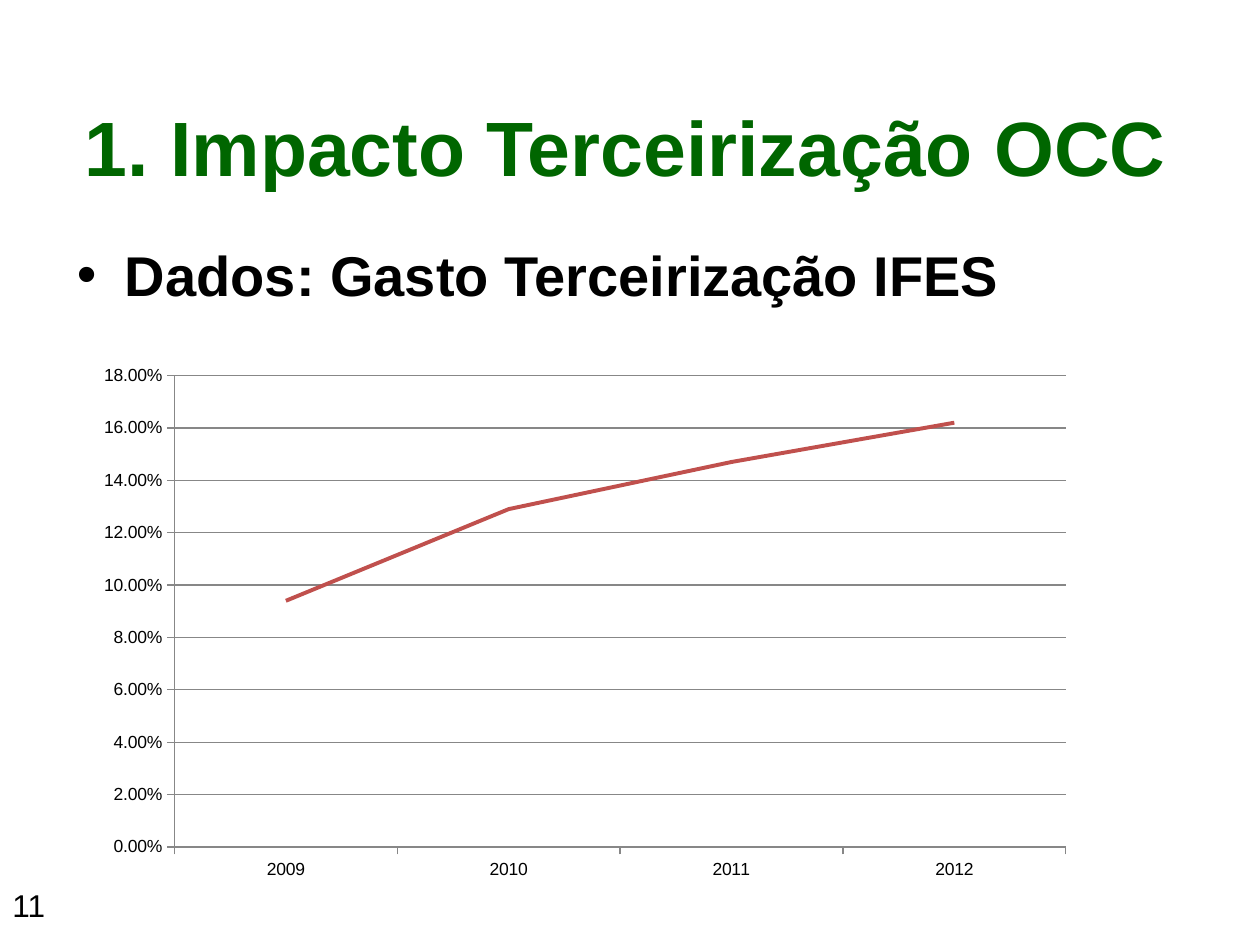
"""Build the slide on the share of outsourcing spending."""
from dataclasses import dataclass, field

from lxml import etree
from pptx import Presentation, util as u
from pptx.chart import data
from pptx.dml.color import RGBColor
from pptx.enum import chart as ch, text as tx
from pptx.oxml import ns


@dataclass(frozen=True)
class Theme:
    face: str = "Arial"
    ink: str = "000000"
    green: str = "006600"
    red: str = "C0504D"
    grid: str = "878787"
    head: int = 44
    body: int = 32
    num: int = 18
    tick: int = 10


@dataclass(frozen=True)
class Label:
    words: str
    box: tuple
    size: int
    color: str
    bold: bool = False
    bullet: bool = False
    frame: dict = field(default_factory=dict)
    para: dict = field(default_factory=dict)


THEME = Theme()
LABELS = (
    Label("11", (0, 17.73, 1.91, 1.32), THEME.num, THEME.ink),
    Label("Dados: Gasto Terceirização IFES", (1.3, 4.72, 22.86, 12.57),
          THEME.body, THEME.ink, bold=True, bullet=True),
    Label("1. Impacto Terceirização OCC", (1.19, 1.35, 22.86, 3.18),
          THEME.head, THEME.green, bold=True,
          frame={"vertical_anchor": tx.MSO_ANCHOR.MIDDLE},
          para={"alignment": tx.PP_ALIGN.CENTER}),
)
AREA = (1.7, 7.14, 20.19, 10.8)
PLOT = {"x": 0.09, "y": 0.04, "w": 0.89, "h": 0.88}
RATES = {"2009": 0.094, "2010": 0.129, "2011": 0.147, "2012": 0.162}


def apply(item, vals: dict) -> None:
    """Set each named format value on an item."""
    for name, val in vals.items():
        setattr(item, name, val)


def style(font, size: int, color: str, bold: bool = False) -> None:
    """Give a font its face, size, weight and colour."""
    apply(font, {"name": THEME.face, "size": u.Pt(size), "bold": bold})
    font.color.rgb = RGBColor.from_string(color)


def stroke(line, color: str, width: float) -> None:
    """Give a line its colour and width."""
    line.color.rgb = RGBColor.from_string(color)
    line.width = u.Pt(width)


def mark(para) -> None:
    """Add a bullet with a hanging indent."""
    props = para._p.get_or_add_pPr()
    gap = u.Cm(0.97)
    props.set("marL", str(gap))
    props.set("indent", str(-gap))
    etree.SubElement(props, ns.qn("a:buFont")).set("typeface", THEME.face)
    etree.SubElement(props, ns.qn("a:buChar")).set("char", "•")


def write(slide, label: Label) -> None:
    """Draw one text box."""
    frame = slide.shapes.add_textbox(*map(u.Cm, label.box)).text_frame
    apply(frame, {"word_wrap": True, **label.frame})
    para = frame.paragraphs[0]
    if label.bullet:
        mark(para)
    apply(para, label.para)
    run = para.add_run()
    run.text = label.words
    style(run.font, label.size, label.color, label.bold)


def place(chart) -> None:
    """Fix the inner plot area within the chart."""
    area = chart._chartSpace.chart.plotArea
    for old in area.findall(ns.qn("c:layout")):
        area.remove(old)
    lay = etree.Element(ns.qn("c:layout"))
    man = etree.SubElement(lay, ns.qn("c:manualLayout"))
    vals = {"layoutTarget": "inner", "xMode": "edge", "yMode": "edge", **PLOT}
    for name, val in vals.items():
        etree.SubElement(man, ns.qn(f"c:{name}")).set("val", str(val))
    area.insert(0, lay)


def plot(slide) -> None:
    """Draw the line chart of yearly rates."""
    info = data.CategoryChartData(number_format="0.00%")
    info.categories = list(RATES)
    info.add_series("Series 1", list(RATES.values()))
    chart = slide.shapes.add_chart(
        ch.XL_CHART_TYPE.LINE, *map(u.Cm, AREA), info).chart
    apply(chart, {"has_legend": False, "has_title": False})
    style(chart.font, THEME.tick, THEME.ink)
    chart.plots[0].vary_by_categories = False
    line = chart.plots[0].series[0]
    line.smooth = False
    line.marker.style = ch.XL_MARKER_STYLE.NONE
    stroke(line.format.line, THEME.red, 2.25)
    cats, rates = chart.category_axis, chart.value_axis
    for axis in (cats, rates):
        apply(axis, {"major_tick_mark": ch.XL_TICK_MARK.OUTSIDE,
                     "minor_tick_mark": ch.XL_TICK_MARK.NONE})
        stroke(axis.format.line, THEME.grid, 0.75)
    apply(rates, {"minimum_scale": 0, "maximum_scale": 0.18,
                  "major_unit": 0.02, "has_major_gridlines": True})
    apply(rates.tick_labels, {"number_format": "0.00%",
                              "number_format_is_linked": False})
    stroke(rates.major_gridlines.format.line, THEME.grid, 0.75)
    place(chart)


def main() -> None:
    """Build and save the slide."""
    deck = Presentation()
    apply(deck, {"slide_width": u.Cm(25.4), "slide_height": u.Cm(19.05)})
    slide = deck.slides.add_slide(deck.slide_layouts[6])
    for label in LABELS:
        write(slide, label)
    plot(slide)
    deck.save("out.pptx")


if __name__ == "__main__":
    main()
